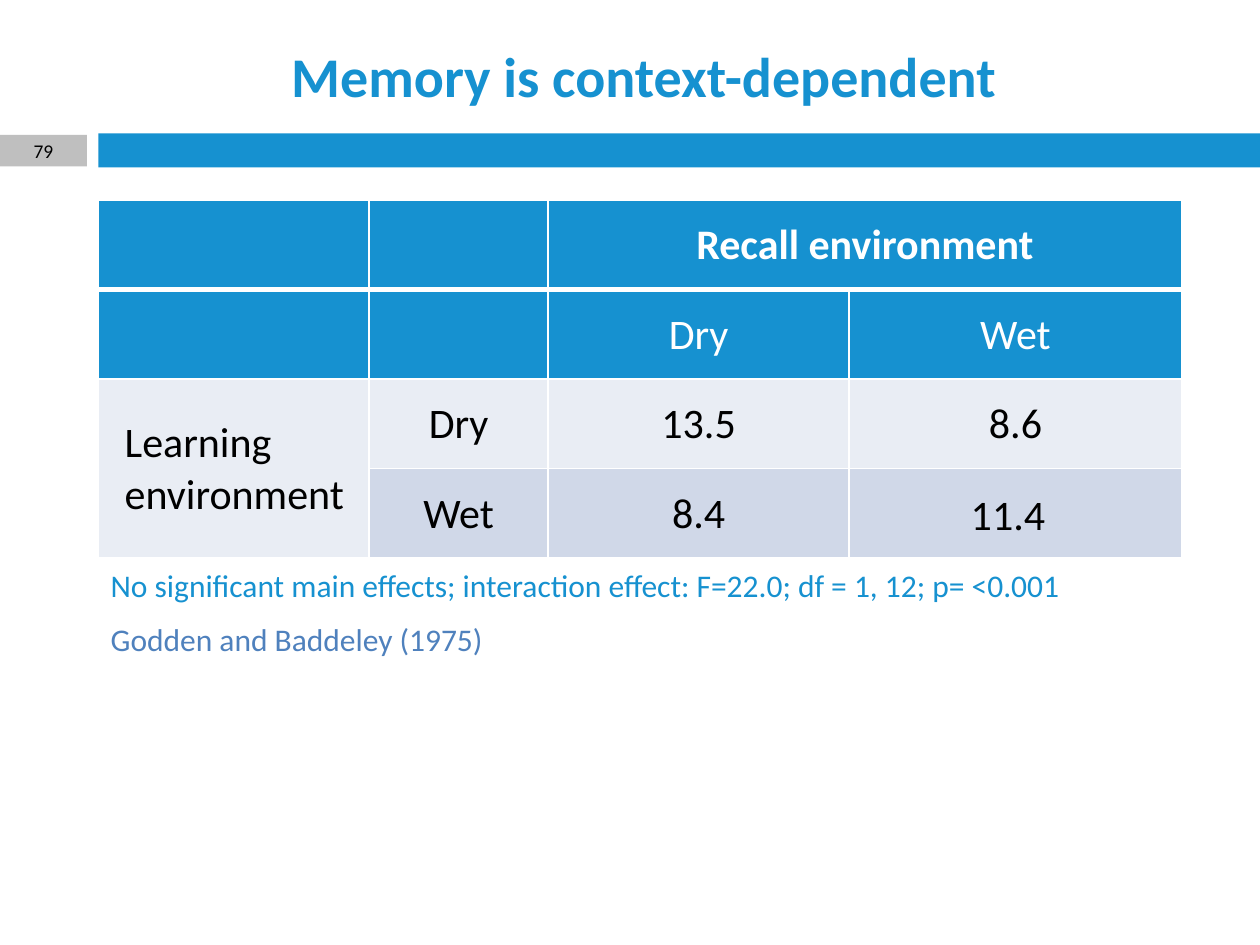
from lxml import etree
from pptx import Presentation
from pptx.dml.color import RGBColor
from pptx.enum.shapes import MSO_SHAPE
from pptx.enum.text import MSO_ANCHOR, PP_ALIGN
from pptx.oxml.ns import qn
from pptx.util import Inches, Pt

RECTANGLE = MSO_SHAPE.RECTANGLE
TOP, MIDDLE = MSO_ANCHOR.TOP, MSO_ANCHOR.MIDDLE
LEFT, CENTER = PP_ALIGN.LEFT, PP_ALIGN.CENTER

BLUE = RGBColor(0x16, 0x91, 0xD0)
STEEL = RGBColor(0x4F, 0x81, 0xBD)
GRAY = RGBColor(0xBF, 0xBF, 0xBF)
PALE = RGBColor(0xE9, 0xED, 0xF4)
LIGHT = RGBColor(0xD0, 0xD8, 0xE8)
WHITE = RGBColor(0xFF, 0xFF, 0xFF)
BLACK = RGBColor(0, 0, 0)

FONT = "Calibri"
MARGIN = 0.78
COLUMN_WIDTHS = (2.15, 1.42, 2.39, 2.64)
ROW_HEIGHT = 0.71
ROW_FILLS = (BLUE, BLUE, PALE, LIGHT)
ROWS = (
    ("", "", "Recall environment", ""),
    ("", "", "Dry", "Wet"),
    ("Learning\nenvironment", "Dry", "13.5", "8.6"),
    ("", "Wet", "8.4", ""),
)


def write_text(frame, text, size=18, color=BLACK, bold=False, align=LEFT):
    for index, line in enumerate(text.split("\n")):
        para = frame.paragraphs[0] if index == 0 else frame.add_paragraph()
        para.alignment = align
        span = para.add_run()
        span.text = line
        span.font.name = FONT
        span.font.size = Pt(size)
        span.font.bold = bold
        span.font.color.rgb = color


def add_text(page, place, text, anchor=TOP, wrap=True, **style):
    box = page.shapes.add_textbox(*map(Inches, place))
    box.text_frame.word_wrap = wrap
    box.text_frame.vertical_anchor = anchor
    write_text(box.text_frame, text, **style)


def add_bar(page, place, color):
    bar = page.shapes.add_shape(RECTANGLE, *map(Inches, place))
    bar.shadow.inherit = False
    bar.fill.solid()
    bar.fill.fore_color.rgb = color
    bar.line.fill.background()
    return bar


def set_border(cell, side, width):
    line = etree.SubElement(cell._tc.get_or_add_tcPr(), qn(f"a:ln{side}"), w=str(Pt(width)))
    fill = etree.SubElement(line, qn("a:solidFill"))
    etree.SubElement(fill, qn("a:srgbClr"), val=str(WHITE))


def format_cell(cell, text, row, column):
    widths = {"L": 1, "R": 1, "T": 3 if row == 1 else 1, "B": 3 if row == 0 else 1}
    for side, width in widths.items():
        set_border(cell, side, width)
    cell.fill.solid()
    cell.fill.fore_color.rgb = ROW_FILLS[row]
    cell.vertical_anchor = MIDDLE
    cell.margin_left = Inches(0.21 if column == 0 else 0.01)
    cell.margin_right = cell.margin_top = Inches(0.01)
    cell.margin_bottom = 0
    if text:
        write_text(cell.text_frame, text, size=24, bold=row == 0,
                   color=WHITE if row < 2 else BLACK,
                   align=LEFT if column == 0 else CENTER)


def add_results(page):
    place = (MARGIN, 1.59, sum(COLUMN_WIDTHS), ROW_HEIGHT * len(ROWS))
    table = page.shapes.add_table(len(ROWS), len(COLUMN_WIDTHS), *map(Inches, place)).table
    table.first_row = table.horz_banding = False
    for column, width in zip(table.columns, COLUMN_WIDTHS):
        column.width = Inches(width)
    for row, texts in enumerate(ROWS):
        table.rows[row].height = Inches(ROW_HEIGHT)
        for column, text in enumerate(texts):
            format_cell(table.cell(row, column), text, row, column)
    table.cell(0, 2).merge(table.cell(0, 3))
    table.cell(2, 0).merge(table.cell(3, 0))


def main():
    deck = Presentation()
    deck.slide_width, deck.slide_height = Inches(10), Inches(7.5)
    page = deck.slides.add_slide(deck.slide_layouts[6])

    add_bar(page, (MARGIN, 1.06, 10 - MARGIN, 0.27), BLUE)
    number = add_bar(page, (0, 1.07, 0.69, 0.25), GRAY)
    number.text_frame.vertical_anchor = MIDDLE
    write_text(number.text_frame, "79", size=11.1, align=CENTER)

    add_text(page, (MARGIN, 0.26, 8.66, 0.68), "Memory is context-dependent",
             anchor=MIDDLE, size=32, color=BLUE, bold=True, align=CENTER)
    add_results(page)
    add_text(page, (MARGIN, 4.87, 5.29, 0.4), "Godden and Baddeley (1975)", color=STEEL)
    add_text(page, (MARGIN, 4.44, 8.92, 0.4),
             "No significant main effects; interaction effect: F=22.0; df = 1, 12; p= <0.001",
             color=BLUE)
    add_text(page, (7.6, 3.83, 0.8, 0.5), "11.4", wrap=False, size=24, align=CENTER)

    deck.save("out.pptx")


if __name__ == "__main__":
    main()
